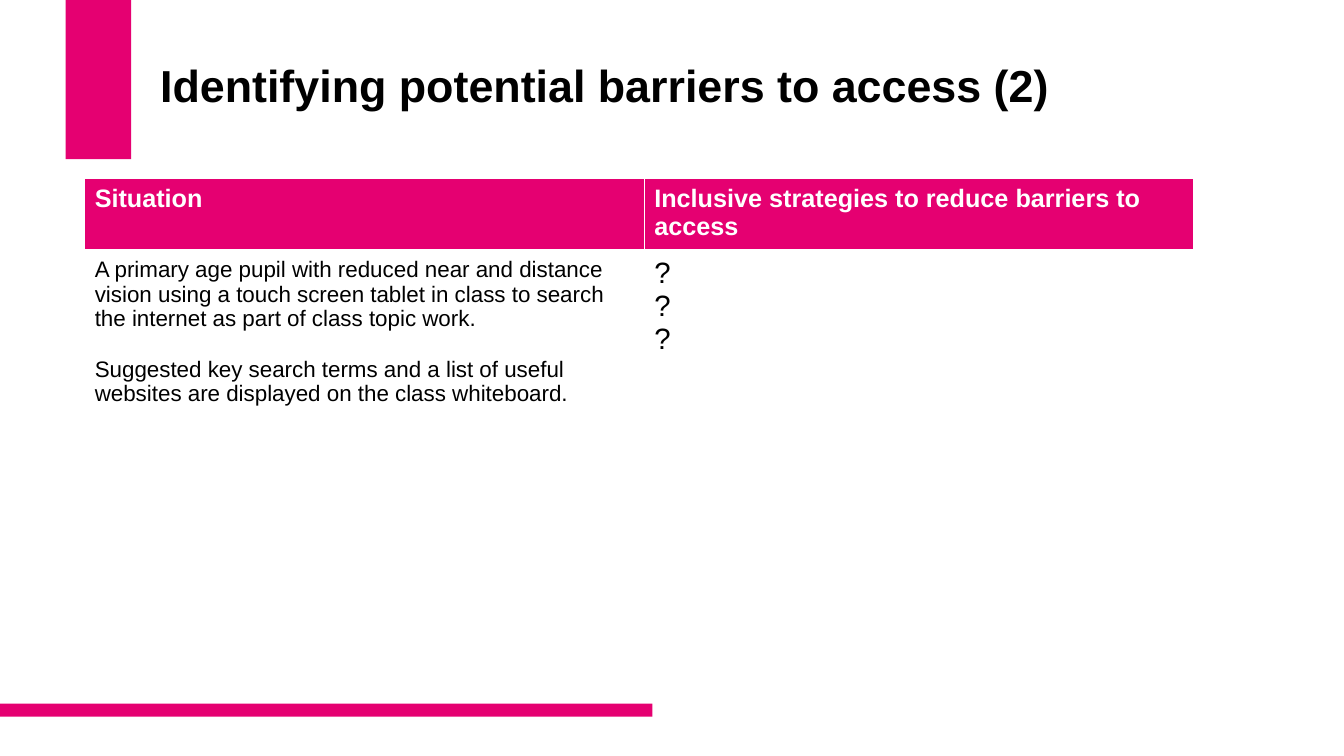
from dataclasses import dataclass

from lxml.etree import SubElement
from pptx import Presentation
from pptx.dml.color import RGBColor
from pptx.enum.shapes import MSO_SHAPE
from pptx.enum.text import MSO_ANCHOR
from pptx.oxml.ns import qn
from pptx.slide import Slide
from pptx.table import _Cell
from pptx.text.text import _Paragraph
from pptx.util import Inches, Pt

PINK = "E50071"
WHITE = "FFFFFF"
BLACK = "000000"
FONT = "Arial"
COLUMN_WIDTHS = (5.55, 5.45)
ROW_HEIGHTS = (0.46, 1.16, 0.46, 0.46)


@dataclass(frozen=True)
class Bar:
    left: float
    top: float
    width: float
    height: float


@dataclass(frozen=True)
class CellContent:
    paragraphs: tuple[str, ...] = ()
    size: float = 18
    color: str = BLACK
    bold: bool = False
    fill: str = WHITE
    paragraph_gap: float = 0
    bottom_border: float = 1


BARS = (Bar(0.65, 0, 0.65, 1.58), Bar(0, 6.98, 6.47, 0.13))


def header(text: str) -> CellContent:
    return CellContent((text,), 18, WHITE, True, PINK, bottom_border=3)


ROWS = (
    (
        header("Situation"),
        header("Inclusive strategies to reduce barriers to access"),
    ),
    (
        CellContent(
            (
                "A primary age pupil with reduced near and distance vision using "
                "a touch screen tablet in class to search the internet as part of "
                "class topic work.",
                "Suggested key search terms and a list of useful websites are "
                "displayed on the class whiteboard.",
            ),
            size=16,
            paragraph_gap=18,
        ),
        CellContent(("?", "?", "?"), size=21),
    ),
    (CellContent(), CellContent()),
    (CellContent(), CellContent()),
)


def rgb(value: str) -> RGBColor:
    return RGBColor.from_string(value)


def add_text(
    paragraph: _Paragraph, text: str, size: float, color: str, bold: bool
) -> None:
    run = paragraph.add_run()
    run.text = text
    run.font.name = FONT
    run.font.size = Pt(size)
    run.font.bold = bold
    run.font.color.rgb = rgb(color)


def draw_bar(slide: Slide, bar: Bar) -> None:
    shape = slide.shapes.add_shape(
        MSO_SHAPE.RECTANGLE,
        Inches(bar.left),
        Inches(bar.top),
        Inches(bar.width),
        Inches(bar.height),
    )
    shape.shadow.inherit = False
    shape.fill.solid()
    shape.fill.fore_color.rgb = rgb(PINK)
    shape.line.fill.background()


def draw_title(slide: Slide, text: str) -> None:
    box = slide.shapes.add_textbox(
        Inches(1.49), Inches(0.4), Inches(9.6), Inches(1.45)
    )
    frame = box.text_frame
    frame.word_wrap = True
    frame.vertical_anchor = MSO_ANCHOR.MIDDLE
    frame.margin_bottom = Inches(0.55)
    paragraph = frame.paragraphs[0]
    paragraph.line_spacing = 0.9
    add_text(paragraph, text, 32, BLACK, True)


def set_borders(cell: _Cell, bottom_width: float) -> None:
    properties = cell._tc.get_or_add_tcPr()
    widths = {"lnL": 1, "lnR": 1, "lnT": 1, "lnB": bottom_width}
    for side, width in widths.items():
        line = SubElement(properties, qn(f"a:{side}"), w=str(Pt(width)))
        fill = SubElement(line, qn("a:solidFill"))
        SubElement(fill, qn("a:srgbClr"), val=WHITE)


def fill_cell(cell: _Cell, content: CellContent) -> None:
    set_borders(cell, content.bottom_border)
    cell.fill.solid()
    cell.fill.fore_color.rgb = rgb(content.fill)
    cell.margin_left = cell.margin_right = Inches(0.1)
    cell.margin_top = cell.margin_bottom = Inches(0.06)
    frame = cell.text_frame
    for index, text in enumerate(content.paragraphs):
        paragraph = frame.add_paragraph() if index else frame.paragraphs[0]
        if index and content.paragraph_gap:
            paragraph.space_before = Pt(content.paragraph_gap)
        add_text(paragraph, text, content.size, content.color, content.bold)


def draw_table(slide: Slide) -> None:
    table = slide.shapes.add_table(
        len(ROW_HEIGHTS),
        len(COLUMN_WIDTHS),
        Inches(0.84),
        Inches(1.77),
        Inches(sum(COLUMN_WIDTHS)),
        Inches(sum(ROW_HEIGHTS)),
    ).table
    table.horz_banding = False
    for column, width in zip(table.columns, COLUMN_WIDTHS):
        column.width = Inches(width)
    for row, height, contents in zip(table.rows, ROW_HEIGHTS, ROWS):
        row.height = Inches(height)
        for cell, content in zip(row.cells, contents):
            fill_cell(cell, content)


def main() -> None:
    presentation = Presentation()
    presentation.slide_width = Inches(13.33)
    presentation.slide_height = Inches(7.5)
    slide = presentation.slides.add_slide(presentation.slide_layouts[6])
    for bar in BARS:
        draw_bar(slide, bar)
    draw_title(slide, "Identifying potential barriers to access (2)")
    draw_table(slide)
    presentation.save("out.pptx")


if __name__ == "__main__":
    main()
